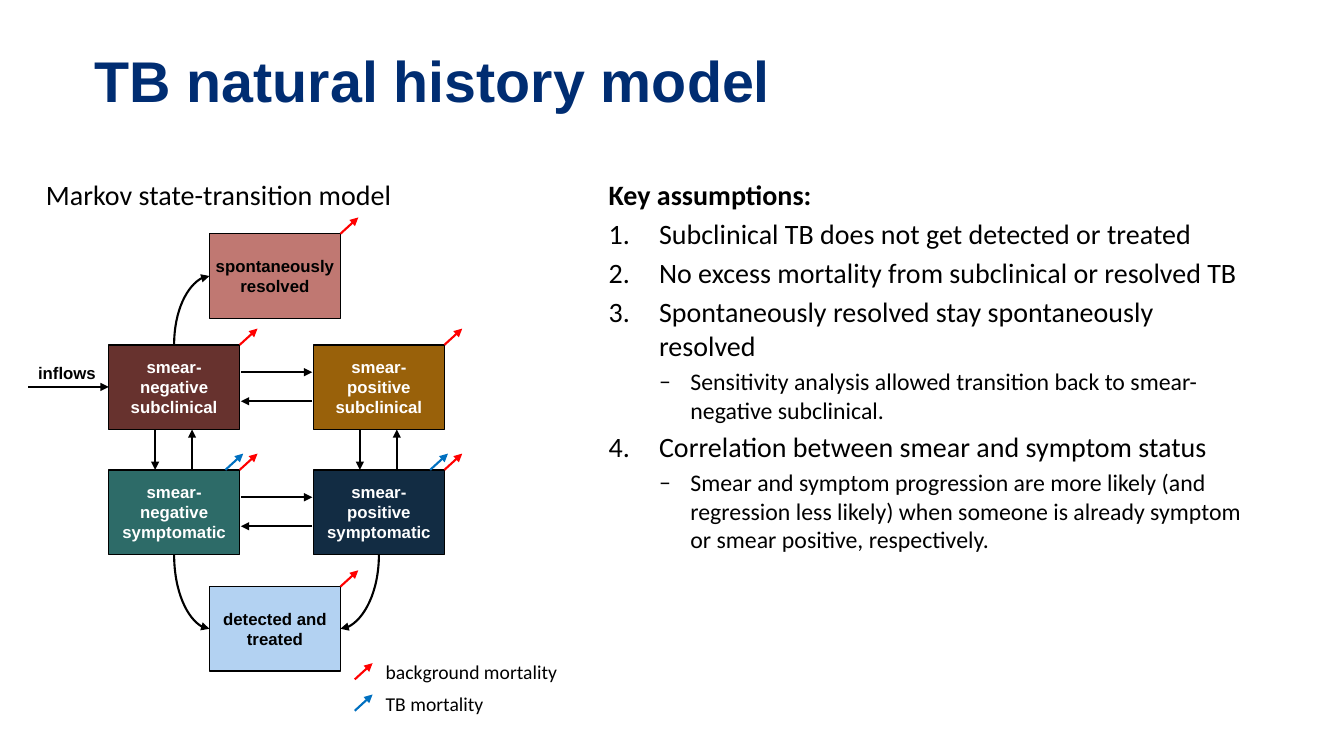
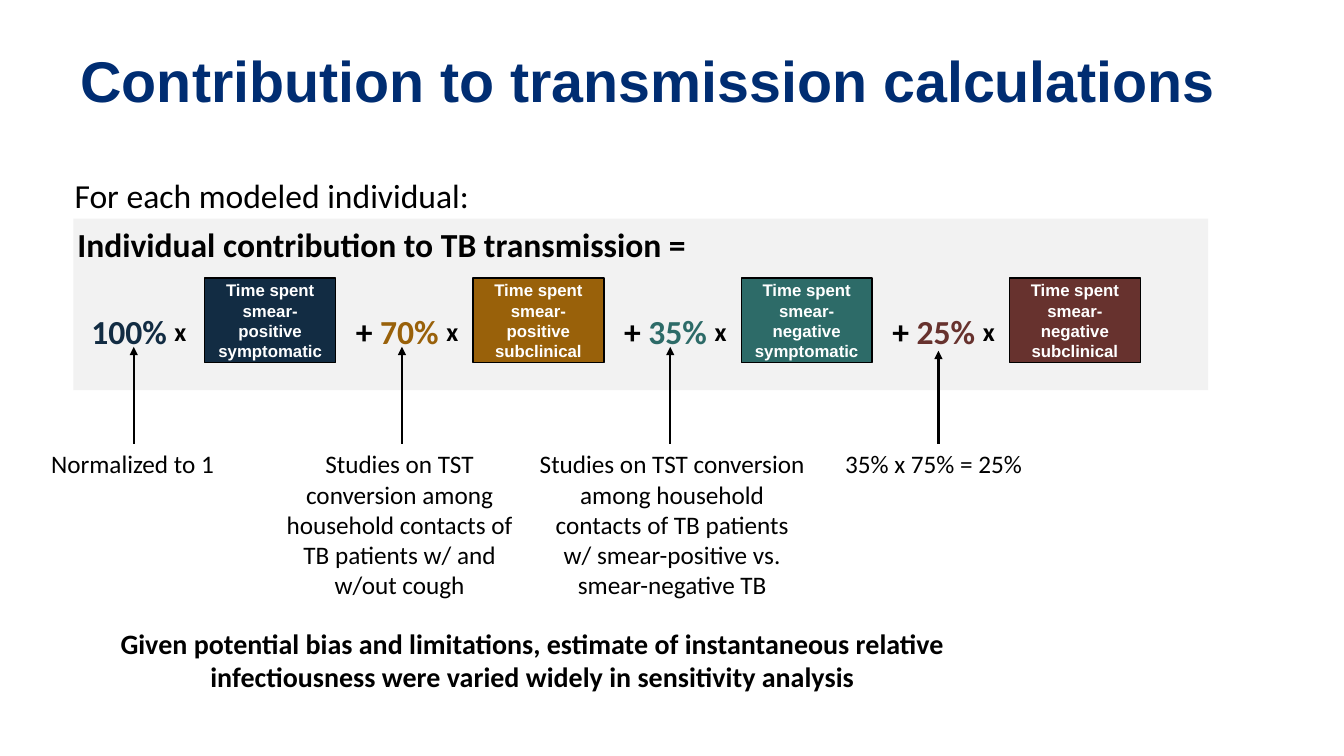
"""Build two slides on a TB natural history model and its transmission calculations."""
from lxml import etree
from pptx import Presentation
from pptx.dml.color import RGBColor
from pptx.enum.shapes import MSO_CONNECTOR, MSO_SHAPE
from pptx.enum.text import MSO_ANCHOR, PP_ALIGN
from pptx.oxml.ns import qn
from pptx.util import Cm, Pt

LEFT, CENTER = PP_ALIGN.LEFT, PP_ALIGN.CENTER
MIDDLE = MSO_ANCHOR.MIDDLE
RECTANGLE = MSO_SHAPE.RECTANGLE
STRAIGHT, CURVE = MSO_CONNECTOR.STRAIGHT, MSO_CONNECTOR.CURVE
SITE_TOP, SITE_LEFT, SITE_BOTTOM, SITE_RIGHT = range(4)

COLORS = {
    "title": "002D72",
    "black": "000000",
    "white": "FFFFFF",
    "band": "F2F2F2",
    "resolved": "C07872",
    "negative_subclinical": "67322E",
    "positive_subclinical": "99610A",
    "negative_symptomatic": "2D6B68",
    "positive_symptomatic": "122C43",
    "treated": "B3D2F2",
    "background_mortality": "FF0000",
    "tb_mortality": "0070C0",
}
HEADING_FONT, BODY_FONT = "Arial", "Calibri"
STATE_WIDTH, STATE_HEIGHT = 3.3, 2.13
COLUMNS = (2.74, 7.9)
MIDDLE_COLUMN = 5.28
ROWS = (8.69, 11.84)
TERM_PITCH = 6.76

STATES = [
    ("resolved", "spontaneously resolved", "black", MIDDLE_COLUMN, 5.89),
    ("negative_subclinical", "smear-negative subclinical", "white", COLUMNS[0], ROWS[0]),
    ("positive_subclinical", "smear-positive subclinical", "white", COLUMNS[1], ROWS[0]),
    ("negative_symptomatic", "smear-negative symptomatic", "white", COLUMNS[0], ROWS[1]),
    ("positive_symptomatic", "smear-positive symptomatic", "white", COLUMNS[1], ROWS[1]),
    ("treated", "detected and treated", "black", MIDDLE_COLUMN, 14.78),
]
CURVES = [
    ("resolved", SITE_LEFT, "negative_subclinical", SITE_TOP),
    ("treated", SITE_LEFT, "negative_symptomatic", SITE_BOTTOM),
    ("treated", SITE_RIGHT, "positive_symptomatic", SITE_BOTTOM),
]
LEGEND = [
    ("background_mortality", "background mortality", 17.12),
    ("tb_mortality", "TB mortality", 17.91),
]
ASSUMPTIONS = [
    ("number", "Subclinical TB does not get detected or treated"),
    ("number", "No excess mortality from subclinical or resolved TB"),
    ("number", "Spontaneously resolved stay spontaneously resolved"),
    ("dash", "Sensitivity analysis allowed transition back to smear-negative subclinical."),
    ("number", "Correlation between smear and symptom status"),
    ("dash", "Smear and symptom progression are more likely (and regression less likely) "
             "when someone is already symptom or smear positive, respectively."),
]
LIST_STYLES = {
    "number": (0, 20, 1.27, -1.27, "buAutoNum", {"type": "arabicPeriod"}),
    "dash": (1, 17, 2.06, -0.79, "buChar", {"char": "–"}),
}
TERMS = [
    ("positive_symptomatic", "100% ", "Normalized to 1", 3.34, 6.6, 8.74),
    ("positive_subclinical", "70% ",
     "Studies on TST conversion among household contacts of TB patients w/ and w/out cough",
     10.07, 6.99, 8.74),
    ("negative_symptomatic", "35% ",
     "Studies on TST conversion among household contacts of TB patients "
     "w/ smear-positive vs. smear-negative TB", 16.94, 7.21, 8.74),
    ("negative_subclinical", "25% ", "35% x 75% = 25%", 23.53, 6.99, 8.84),
]


def color(name):
    """Return the named palette colour."""
    return RGBColor.from_string(COLORS[name])


def add_run(paragraph, text, size, color_name="black", bold=False, font=BODY_FONT):
    """Append a formatted run to a paragraph."""
    run = paragraph.add_run()
    run.text = text
    run.font.name = font
    run.font.size = Pt(size)
    run.font.bold = bold
    run.font.color.rgb = color(color_name)
    return run


def add_frame(slide, left, top, width, height):
    """Add an empty wrapping text box and return its text frame."""
    text_box = slide.shapes.add_textbox(Cm(left), Cm(top), Cm(width), Cm(height))
    text_box.text_frame.word_wrap = True
    return text_box.text_frame


def add_text(slide, box, text, size, alignment=LEFT, **style):
    """Add a text box holding one paragraph."""
    paragraph = add_frame(slide, *box).paragraphs[0]
    paragraph.alignment = alignment
    add_run(paragraph, text, size, **style)


def add_title(slide, text, left):
    """Add the slide title."""
    add_text(slide, (left, 1.02, 29.64, 2.31), text, 41,
             color_name="title", bold=True, font=HEADING_FONT)


def add_rectangle(slide, box, fill_name):
    """Add a filled rectangle without outline or shadow."""
    shape = slide.shapes.add_shape(RECTANGLE, *(Cm(length) for length in box))
    shape.shadow.inherit = False
    shape.fill.solid()
    shape.fill.fore_color.rgb = color(fill_name)
    shape.line.fill.background()
    return shape


def add_state(slide, left, top, fill_name, text, text_color="white", inset=0.25):
    """Add a labelled box for one disease state."""
    shape = add_rectangle(slide, (left, top, STATE_WIDTH, STATE_HEIGHT), fill_name)
    shape.line.color.rgb = color("black")
    shape.line.width = Pt(1)
    frame = shape.text_frame
    frame.word_wrap = True
    frame.vertical_anchor = MIDDLE
    frame.margin_left = frame.margin_right = Cm(inset)
    frame.paragraphs[0].alignment = CENTER
    add_run(frame.paragraphs[0], text, 12, text_color, True, HEADING_FONT)
    return shape


def style_connector(connector, color_name, arrow_end):
    """Set line, arrowhead and empty effects on a connector."""
    connector.line.color.rgb = color(color_name)
    connector.line.width = Pt(1.5)
    line = connector.line._get_or_add_ln()
    etree.SubElement(line, qn(f"a:{arrow_end}"), type="triangle")
    etree.SubElement(connector._element.spPr, qn("a:effectLst"))


def add_arrow(slide, start, end, color_name="black"):
    """Add a straight arrow from start to end."""
    connector = slide.shapes.add_connector(
        STRAIGHT, *(Cm(length) for length in (*start, *end)))
    style_connector(connector, color_name, "tailEnd")


def add_curve(slide, target, target_site, source, source_site):
    """Add a quarter-turn arrow that points at the target shape."""
    connector = slide.shapes.add_connector(CURVE, 0, 0, 0, 0)
    connector.begin_connect(target, target_site)
    connector.end_connect(source, source_site)
    connector._element.spPr.find(qn("a:prstGeom")).set("prst", "curvedConnector2")
    style_connector(connector, "black", "headEnd")


def add_mortality_arrow(slide, left, bottom, color_name):
    """Add a short diagonal exit arrow."""
    add_arrow(slide, (left, bottom), (left + 0.45, bottom - 0.41), color_name)


def add_list_item(frame, kind, text):
    """Append a numbered or dashed paragraph."""
    level, size, margin, indent, tag, attributes = LIST_STYLES[kind]
    paragraph = frame.add_paragraph()
    paragraph.level = level
    properties = paragraph._p.get_or_add_pPr()
    properties.set("marL", str(Cm(margin)))
    properties.set("indent", str(Cm(indent)))
    etree.SubElement(properties, qn("a:buFont"), typeface=BODY_FONT)
    etree.SubElement(properties, qn(f"a:{tag}"), attributes)
    paragraph.space_before = Pt(size / 5)
    add_run(paragraph, text, size)


def add_transitions(slide):
    """Add the paired arrows between the four active states."""
    left_edge, right_edge = COLUMNS[0] + STATE_WIDTH + 0.03, COLUMNS[1] - 0.03
    for row in ROWS:
        forward, back = row + 0.69, row + 1.42
        add_arrow(slide, (left_edge, forward), (right_edge, forward))
        add_arrow(slide, (right_edge, back), (left_edge, back))
    top_edge, bottom_edge = ROWS[0] + STATE_HEIGHT, ROWS[1]
    for column in COLUMNS:
        down, up = column + 1.17, column + 2.1
        add_arrow(slide, (down, top_edge), (down, bottom_edge))
        add_arrow(slide, (up, bottom_edge), (up, top_edge))


def build_model_slide(slide):
    """Fill the slide with the state diagram and the assumptions."""
    add_title(slide, "TB natural history model", 2.13)
    add_text(slide, (0.91, 4.34, 14, 1.35), "Markov state-transition model", 20)
    shapes = {}
    for name, text, text_color, left, top in STATES:
        inset = 0.13 if name == "resolved" else 0.25
        shapes[name] = add_state(slide, left, top, name, text, text_color, inset)
    add_transitions(slide)
    for target, target_site, source, source_site in CURVES:
        add_curve(slide, shapes[target], target_site, shapes[source], source_site)
    for name, _, _, left, top in STATES:
        corner = left + STATE_WIDTH
        add_mortality_arrow(slide, corner, top, "background_mortality")
        if name.endswith("symptomatic"):
            add_mortality_arrow(slide, corner - 0.36, top, "tb_mortality")
    for color_name, text, bottom in LEGEND:
        add_mortality_arrow(slide, 8.94, bottom, color_name)
        add_text(slide, (9.47, bottom - 0.61, 5.08, 0.86), text, 14)
    add_arrow(slide, (0.71, 9.75), (COLUMNS[0], 9.75))
    add_text(slide, (0.71, 9.02, 2.2, 0.76), "inflows", 12, bold=True, font=HEADING_FONT)
    frame = add_frame(slide, 15.09, 4.34, 16.69, 13.82)
    add_run(frame.paragraphs[0], "Key assumptions:", 20, bold=True)
    for kind, text in ASSUMPTIONS:
        add_list_item(frame, kind, text)


def add_term(slide, index, name, weight, caption, caption_center, caption_width, tip):
    """Add one weighted term of the sum with its arrow and caption."""
    shift = index * TERM_PITCH
    paragraph = add_frame(slide, 1.85 + shift, 7.44, 3.3, 1.27).paragraphs[0]
    paragraph.alignment = CENTER
    if index:
        add_run(paragraph, "+ ", 24, bold=True)
    add_run(paragraph, weight, 24, name, True)
    times = add_run(paragraph, "x", 32, bold=True)
    times._r.get_or_add_rPr().set("baseline", "8000")
    label = "Time spent smear-" + name.replace("_", " ")
    add_state(slide, 5.16 + shift, 7.01, name, label)
    add_arrow(slide, (3.37 + shift, 11.18), (3.37 + shift, tip))
    box = (caption_center - caption_width / 2, 11.18, caption_width, 4.11)
    add_text(slide, box, caption, 18, CENTER)


def build_transmission_slide(slide):
    """Fill the slide with the weighted sum and its sources."""
    add_title(slide, "Contribution to transmission calculations", 1.78)
    add_rectangle(slide, (1.85, 5.51, 28.6, 4.32), "band")
    add_text(slide, (1.63, 4.29, 29.2, 1.2), "For each modeled individual:", 24)
    add_text(slide, (1.7, 5.51, 17.2, 1.27),
             "Individual contribution to TB transmission =", 24, bold=True)
    for index, term in enumerate(TERMS):
        add_term(slide, index, *term)
    add_text(slide, (2.39, 15.65, 22.05, 1.96),
             "Given potential bias and limitations, estimate of instantaneous relative "
             "infectiousness were varied widely in sensitivity analysis", 20, CENTER, bold=True)


def main():
    """Build and save the presentation."""
    presentation = Presentation()
    presentation.slide_width, presentation.slide_height = Cm(33.87), Cm(19.05)
    blank_layout = presentation.slide_layouts[6]
    for build in (build_model_slide, build_transmission_slide):
        build(presentation.slides.add_slide(blank_layout))
    presentation.save("out.pptx")


if __name__ == "__main__":
    main()
